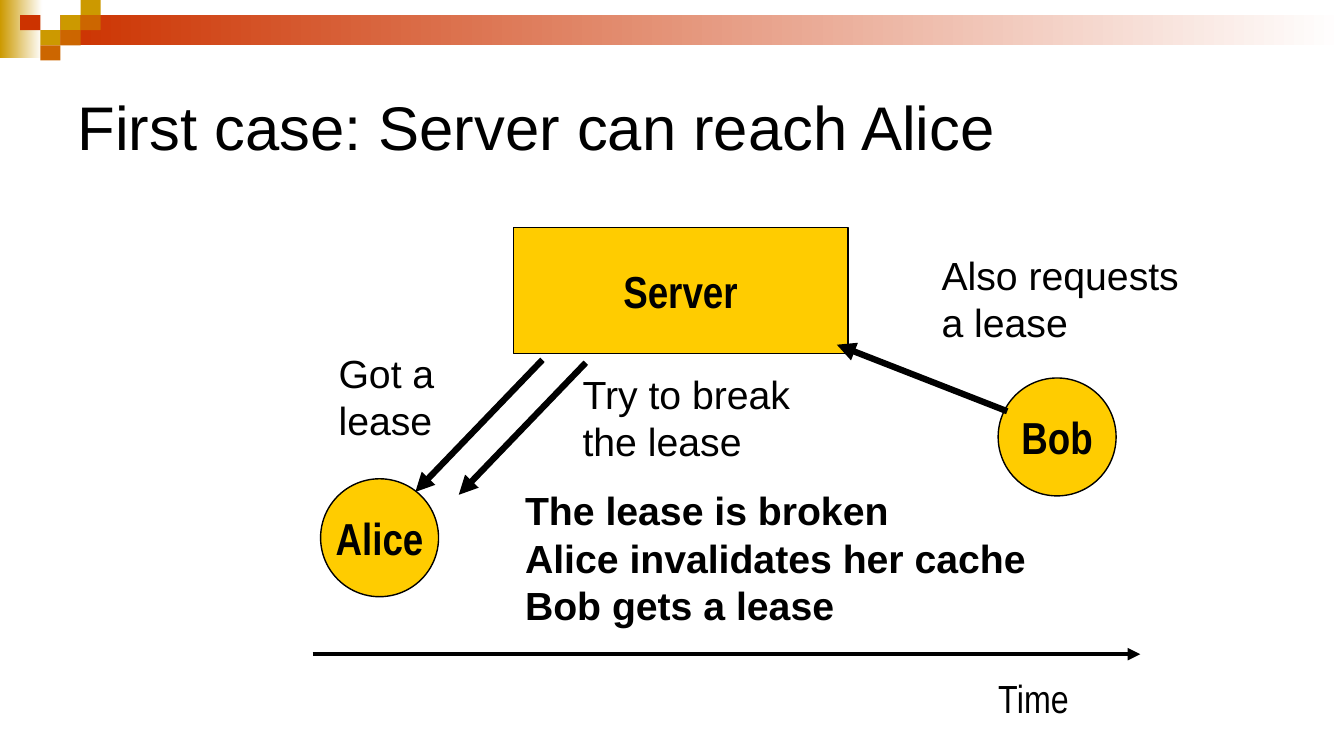
import pptx
import pptx.util
import pptx.dml.color
import pptx.enum.shapes
import pptx.enum.text
import lxml.etree

Inches = pptx.util.Inches
Pt = pptx.util.Pt
SHAPE = pptx.enum.shapes.MSO_SHAPE
ALIGN = pptx.enum.text.PP_ALIGN
ANCHOR = pptx.enum.text.MSO_ANCHOR
FIT = pptx.enum.text.MSO_AUTO_SIZE

HUES = {"ink": "000000", "node": "FFCC00", "gold": "CC9900",
        "red": "CC3300", "rust": "CC6600", "white": "FFFFFF"}
TITLE = {"size": Pt(44), "name": "Arial", "bold": False}
NODE = {"size": Pt(32), "name": "Arial Narrow", "bold": True}
NOTE = {"size": Pt(28), "name": "Arial", "bold": False}
STRONG = {**NOTE, "bold": True}
AXIS = {**NOTE, "name": "Arial Narrow"}


def rgb(hue):
    """Return the colour of a named hue."""
    return pptx.dml.color.RGBColor.from_string(HUES[hue])


def apply(item, look):
    """Set each attribute in a dict of format values."""
    for key, value in look.items():
        setattr(item, key, value)


def write(frame, text, font, align, frame_look):
    """Fill a text frame and format all its runs."""
    apply(frame, frame_look)
    frame.text = text
    for para in frame.paragraphs:
        para.alignment = align
        for run in para.runs:
            apply(run.font, font)
            run.font.color.rgb = rgb("ink")


def block(slide, kind, box, hue, fade=False):
    """Add a filled preset shape with no outline."""
    shape = slide.shapes.add_shape(kind, *map(Inches, box))
    shape.shadow.inherit = False
    shape.line.fill.background()
    if fade:
        shape.fill.gradient()
        shape.fill.gradient_angle = 0
        for stop, tone in zip(shape.fill.gradient_stops, (hue, "white")):
            stop.color.rgb = rgb(tone)
            stop.position = float(tone == "white")
    else:
        shape.fill.solid()
        shape.fill.fore_color.rgb = rgb(hue)
    return shape


def node(slide, kind, box, text):
    """Add an outlined, labelled participant."""
    shape = block(slide, kind, box, "node")
    shape.line.color.rgb = rgb("ink")
    shape.line.width = Pt(1)
    write(shape.text_frame, text, NODE, ALIGN.CENTER,
          {"word_wrap": False, "vertical_anchor": ANCHOR.MIDDLE})


def note(slide, box, text, font=NOTE):
    """Add a left-aligned text box."""
    frame = slide.shapes.add_textbox(*map(Inches, box)).text_frame
    write(frame, text, font, ALIGN.LEFT,
          {"word_wrap": False, "auto_size": FIT.SHAPE_TO_FIT_TEXT})


def arrow(slide, start, end, width=4.5):
    """Draw a straight arrow from start to end."""
    line = slide.shapes.add_connector(
        pptx.enum.shapes.MSO_CONNECTOR.STRAIGHT, *map(Inches, start + end))
    line.line.color.rgb = rgb("ink")
    line.line.width = Pt(width)
    space = pptx.oxml.ns.qn
    tail = lxml.etree.SubElement(line.line._get_or_add_ln(), space("a:tailEnd"))
    tail.set("type", "triangle")
    lxml.etree.SubElement(line._element.spPr, space("a:effectLst"))


def banner(slide, box):
    """Place the faded bars and the mosaic of tiles."""
    left, top, width, height = box
    tile_w, tile_h = 0.2, height / 4
    block(slide, SHAPE.RECTANGLE, (left, top, 0.42, 0.58), "gold", True)
    block(slide, SHAPE.RECTANGLE,
          (left + 3 * tile_w, top + tile_h, width - 3 * tile_w, 2 * tile_h),
          "red", True)
    tiles = [(3, 1, "gold"), (4, 0, "gold"), (4, 1, "rust"), (2, 2, "gold"),
             (1, 1, "red"), (3, 2, "rust"), (2, 3, "rust")]
    for col, row, hue in tiles:
        block(slide, SHAPE.RECTANGLE,
              (left + col * tile_w, top + row * tile_h, tile_w, tile_h), hue)


def heading(slide, box, text):
    """Move and format the title placeholder."""
    title = slide.shapes.title
    places = zip(("left", "top", "width", "height"), map(Inches, box))
    apply(title, dict(places))
    write(title.text_frame, text, TITLE, ALIGN.LEFT,
          {"word_wrap": True, "auto_size": FIT.NONE,
           "vertical_anchor": ANCHOR.MIDDLE})


def timeline(slide, box):
    """Draw the time axis with its label."""
    left, top, width, height = box
    arrow(slide, (left, top), (left + width, top), 3)
    note(slide, (left + 6.7, top + 0.15, 0.91, height - 0.15), "Time", AXIS)


def scene(slide, box):
    """Place the server, both clients, their messages and the outcome."""
    left, top, width, height = box
    size = 1.17
    bob = left + width - 1.92
    node(slide, SHAPE.RECTANGLE, (left + 1.91, top, 3.32, 1.25), "Server")
    node(slide, SHAPE.OVAL, (left, top + 2.49, size, size), "Alice")
    node(slide, SHAPE.OVAL, (bob, top + 1.49, size, size), "Bob")
    for step in (0, 0.43):
        drop = top + 1.31 + step / 15
        arrow(slide, (left + 2.2 + step, drop), (left + 0.94 + step, drop + 1.31))
    arrow(slide, (bob + 0.09, top + 1.82), (bob - 1.6, top + 1.16))
    note(slide, (left + 0.08, top + 1.16, 1.16, 1.04), "Got a\vlease")
    note(slide, (bob - 0.66, top + 0.18, 2.58, 1.04), "Also requests\va lease")
    note(slide, (left + 2.5, top + 1.36, 2.29, 1.04), "Try to break\vthe lease")
    note(slide, (left + 1.93, top + height - 1.51, 5.23, 1.51),
         "The lease is broken\vAlice invalidates her cache\nBob gets a lease",
         STRONG)


def main():
    """Build and save the slide."""
    deck = pptx.Presentation()
    apply(deck, {"slide_width": Inches(13.33), "slide_height": Inches(7.5)})
    slide = deck.slides.add_slide(deck.slide_layouts[5])
    banner(slide, (0, 0, 13.33, 0.6))
    heading(slide, (0.67, 0.5, 12, 1.5), "First case: Server can reach Alice")
    timeline(slide, (3.1, 6.49, 8.21, 0.72))
    scene(slide, (3.18, 2.26, 8.64, 4.03))
    deck.save("out.pptx")


if __name__ == "__main__":
    main()
